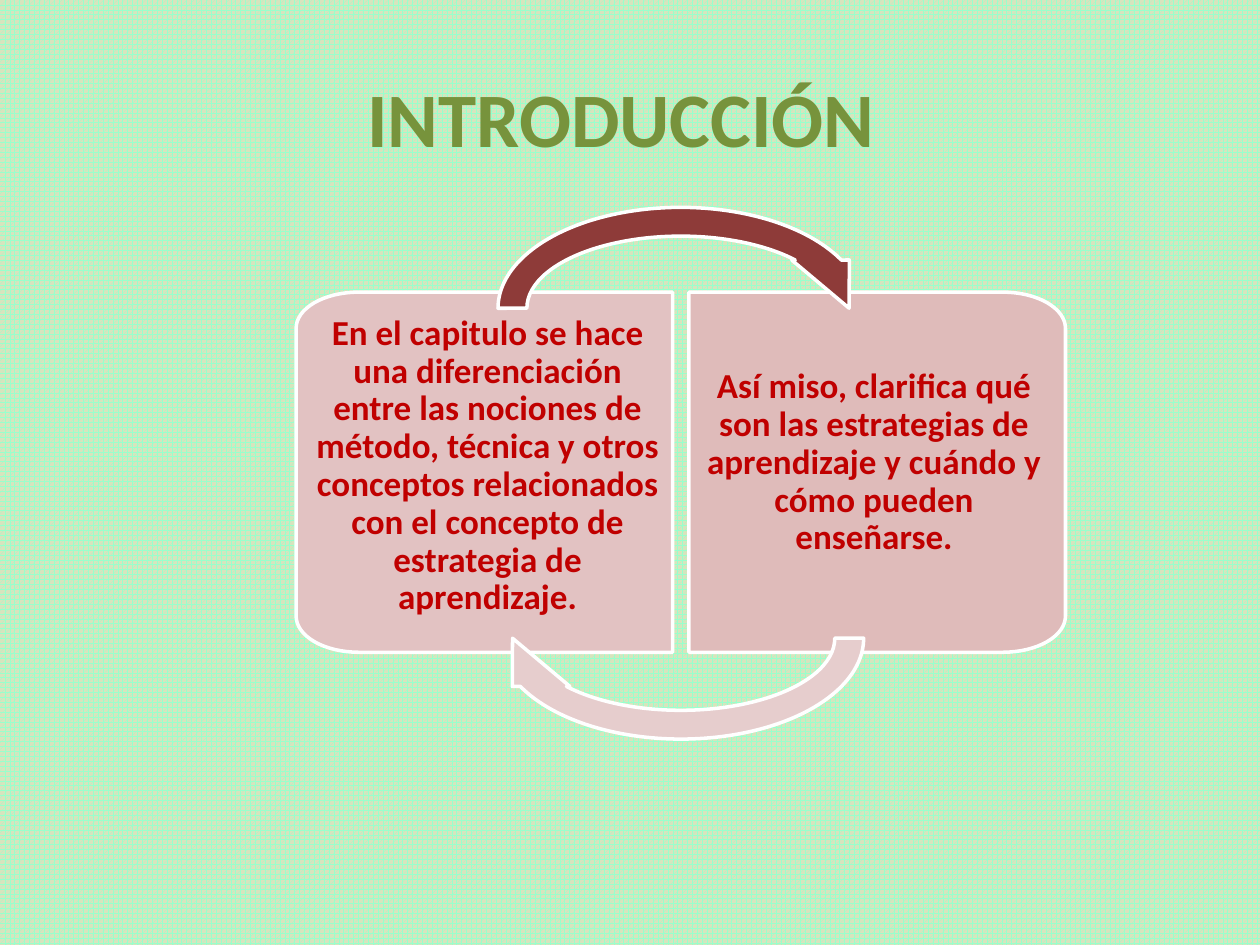
from dataclasses import dataclass
from math import cos, pi, sin

from pptx import Presentation
from pptx.dml.color import RGBColor
from pptx.enum.dml import MSO_PATTERN
from pptx.enum.shapes import MSO_SHAPE
from pptx.enum.text import MSO_ANCHOR, PP_ALIGN
from pptx.util import Cm, Pt

SPHERE = MSO_PATTERN.SPHERE
ARROW = MSO_SHAPE.CIRCULAR_ARROW
TOP, MIDDLE = MSO_ANCHOR.TOP, MSO_ANCHOR.MIDDLE
CENTER = PP_ALIGN.CENTER

FONT = "Calibri"
WIDE, HIGH = 7.59, 7.26
ROUND_X, ROUND_Y = 1.26, 0.73
STEPS = 16
BOX_TOP = 5.89
BEND = (0.125, 11.423, 204.577, 108, 0.125)


@dataclass
class Box:
    left: float
    side: int
    fill: str
    inset: float
    text: str


@dataclass
class Arrow:
    top: float
    turn: int
    fill: str


BOXES = (
    Box(5.97, -1, "E2C2C2", 0.46,
        "En el capitulo se hace una diferenciación entre las nociones de "
        "método, técnica y otros conceptos relacionados con el concepto de "
        "estrategia de aprendizaje."),
    Box(13.89, 1, "DFBBBA", 1.54,
        "Así miso, clarifica qué son las estrategias de aprendizaje y "
        "cuándo y cómo pueden enseñarse."),
)
ARROWS = (Arrow(3.89, 0, "8E3B39"), Arrow(10.54, 180, "E6CDCD"))


def color(code: str) -> RGBColor:
    return RGBColor.from_string(code)


def paint(shape, fill: str) -> None:
    shape.shadow.inherit = False
    shape.fill.solid()
    shape.fill.fore_color.rgb = color(fill)
    shape.line.color.rgb = color("FFFFFF")
    shape.line.width = Pt(2)


def write(shape, text: str, size: int, code: str) -> None:
    frame = shape.text_frame
    frame.word_wrap = True
    frame.text = text
    para = frame.paragraphs[0]
    para.alignment = CENTER
    font = para.font
    font.name, font.size, font.bold = FONT, Pt(size), True
    font.color.rgb = color(code)


def outline(box: Box) -> list[tuple[int, int]]:
    mid = box.left + WIDE / 2
    flat = mid - box.side * WIDE / 2
    core = mid + box.side * (WIDE / 2 - ROUND_X)
    turns = [pi / 2 * step / STEPS for step in range(STEPS + 1)]
    upper = [(core + box.side * ROUND_X * sin(turn),
              BOX_TOP + ROUND_Y * (1 - cos(turn))) for turn in turns]
    lower = [(x, 2 * BOX_TOP + HIGH - y) for x, y in reversed(upper)]
    points = [(flat, BOX_TOP), *upper, *lower, (flat, BOX_TOP + HIGH)]
    return [(Cm(x), Cm(y)) for x, y in points]


def draw_box(slide, box: Box) -> None:
    first, *rest = outline(box)
    pen = slide.shapes.build_freeform(*first)
    pen.add_line_segments(rest, close=True)
    shape = pen.convert_to_shape()
    paint(shape, box.fill)
    write(shape, box.text, 20, "C00000")
    frame = shape.text_frame
    frame.vertical_anchor = TOP
    frame.margin_left = Cm(0.36 if box.side < 0 else 0.23)
    frame.margin_right = Cm(0.23 if box.side < 0 else 0.36)
    frame.margin_top, frame.margin_bottom = Cm(box.inset), Cm(0.46)
    frame.paragraphs[0].line_spacing = 0.9


def draw_arrow(slide, arrow: Arrow) -> None:
    shape = slide.shapes.add_shape(
        ARROW, Cm(9.75), Cm(arrow.top), Cm(7.95), Cm(4.65))
    for index, value in enumerate(BEND):
        shape.adjustments[index] = value
    shape.rotation = arrow.turn
    paint(shape, arrow.fill)


def main() -> None:
    deck = Presentation()
    deck.slide_width, deck.slide_height = Cm(25.4), Cm(19.05)
    slide = deck.slides.add_slide(deck.slide_layouts[5])

    back = slide.background.fill
    back.patterned()
    back.pattern = SPHERE
    back.fore_color.rgb = color("99FFCC")
    back.back_color.rgb = color("D7E4BD")

    title = slide.shapes.title
    title.left, title.top = Cm(1.27), Cm(0.76)
    title.width, title.height = Cm(22.86), Cm(3.18)
    write(title, "INTRODUCCIÓN ", 44, "77933C")
    title.text_frame.vertical_anchor = MIDDLE

    for box in BOXES:
        draw_box(slide, box)
    for arrow in ARROWS:
        draw_arrow(slide, arrow)
    deck.save("out.pptx")


if __name__ == "__main__":
    main()
